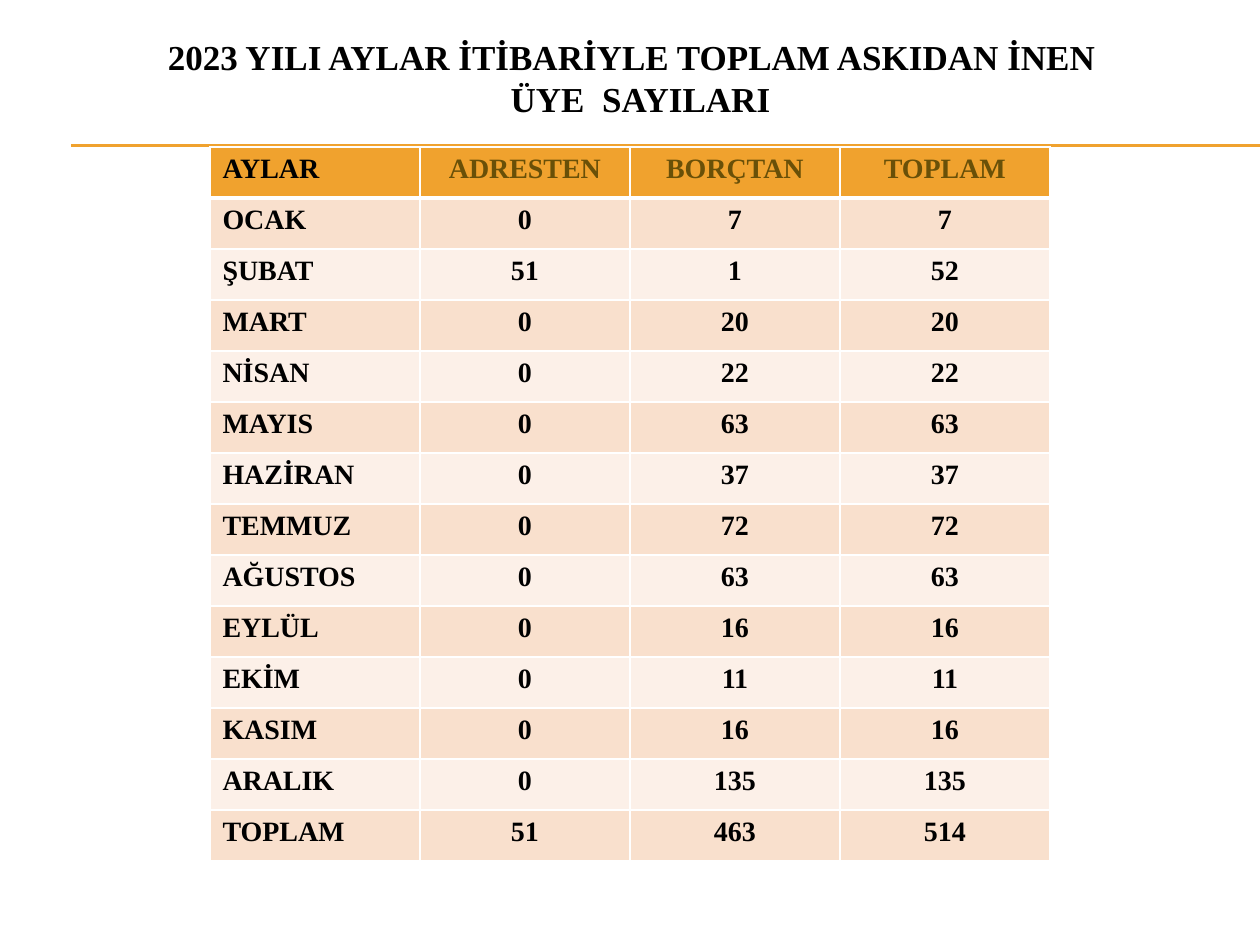
from lxml.etree import SubElement
from pptx import Presentation
from pptx.dml.color import RGBColor
from pptx.enum.shapes import MSO_CONNECTOR
from pptx.enum.text import MSO_ANCHOR, PP_ALIGN
from pptx.oxml.ns import qn
from pptx.util import Emu, Pt

SCALE = 914400 / 126  # EMU in one px
FONT = "Times New Roman"
BLACK = RGBColor(0x00, 0x00, 0x00)
WHITE = RGBColor(0xFF, 0xFF, 0xFF)
GOLD = RGBColor(0xF0, 0xA2, 0x2E)
BROWN = RGBColor(0x69, 0x50, 0x08)
PEACH = RGBColor(0xF9, 0xE0, 0xCD)
CREAM = RGBColor(0xFC, 0xF0, 0xE8)

TITLE = "2023 YILI AYLAR İTİBARİYLE TOPLAM ASKIDAN İNEN  \vÜYE  SAYILARI"
HEAD = ("AYLAR", "ADRESTEN", "BORÇTAN", "TOPLAM")
MONTHS = (
    ("OCAK", 0, 7),
    ("ŞUBAT", 51, 1),
    ("MART", 0, 20),
    ("NİSAN", 0, 22),
    ("MAYIS", 0, 63),
    ("HAZİRAN", 0, 37),
    ("TEMMUZ", 0, 72),
    ("AĞUSTOS", 0, 63),
    ("EYLÜL", 0, 16),
    ("EKİM", 0, 11),
    ("KASIM", 0, 16),
    ("ARALIK", 0, 135),
)


def px(num):
    return Emu(round(num * SCALE))


class Page:
    def __init__(self, deck):
        self.slide = deck.slides.add_slide(deck.slide_layouts[6])
        self.shapes = self.slide.shapes

    def style(self, para, size, color, align):
        para.alignment = align
        for run in para.runs:
            run.font.name = FONT
            run.font.size = Pt(size)
            run.font.bold = True
            run.font.color.rgb = color

    def text(self, words, left, top, width, height, size):
        frame = self.shapes.add_textbox(
            px(left), px(top), px(width), px(height)).text_frame
        frame.word_wrap = True
        frame.vertical_anchor = MSO_ANCHOR.MIDDLE
        frame.text = words
        self.style(frame.paragraphs[0], size, BLACK, PP_ALIGN.CENTER)

    def rule(self, left, right, y):
        line = self.shapes.add_connector(
            MSO_CONNECTOR.STRAIGHT, px(left), px(y), px(right), px(y))
        line.line.color.rgb = GOLD
        line.line.width = Pt(0.75)
        SubElement(line._element.spPr, qn("a:effectLst"))

    def edge(self, cell, side, width):
        props = cell._tc.get_or_add_tcPr()
        line = SubElement(props, qn("a:ln" + side), w=str(Pt(width)))
        fill = SubElement(line, qn("a:solidFill"))
        SubElement(fill, qn("a:srgbClr"), val=str(WHITE))

    def cell(self, cell, words, fill, color, align, top, base):
        for side, width in zip("LRTB", (1, 1, top, base)):
            self.edge(cell, side, width)
        cell.fill.solid()
        cell.fill.fore_color.rgb = fill
        cell.text_frame.text = str(words)
        self.style(cell.text_frame.paragraphs[0], 16, color, align)

    def table(self, rows, left, top, wide, high):
        count = len(rows[0])
        grid = self.shapes.add_table(
            len(rows), count, px(left), px(top),
            px(wide * count), px(high * len(rows))).table
        for col in grid.columns:
            col.width = px(wide)
        for r, row in enumerate(rows):
            grid.rows[r].height = px(high)
            fill = GOLD if r == 0 else PEACH if r % 2 else CREAM
            for c, words in enumerate(row):
                color = BROWN if r == 0 and c else BLACK
                align = PP_ALIGN.CENTER if c else PP_ALIGN.LEFT
                self.cell(grid.cell(r, c), words, fill, color, align,
                          3 if r == 1 else 1, 3 if r == 0 else 1)


def main():
    deck = Presentation()
    deck.slide_width, deck.slide_height = px(1260), px(945)
    page = Page(deck)

    # Double rule under the title
    for y in (145, 146):
        page.rule(71, 1260, y)

    # Monthly counts with row and column totals
    rows = [(name, post, debt, post + debt) for name, post, debt in MONTHS]
    sums = [sum(col) for col in list(zip(*rows))[1:]]
    page.table([HEAD, *rows, ("TOPLAM", *sums)], 210, 147, 210, 51)

    # Title
    page.text(TITLE, 42, 20, 1197, 116, 20)

    deck.save("out.pptx")


if __name__ == "__main__":
    main()
